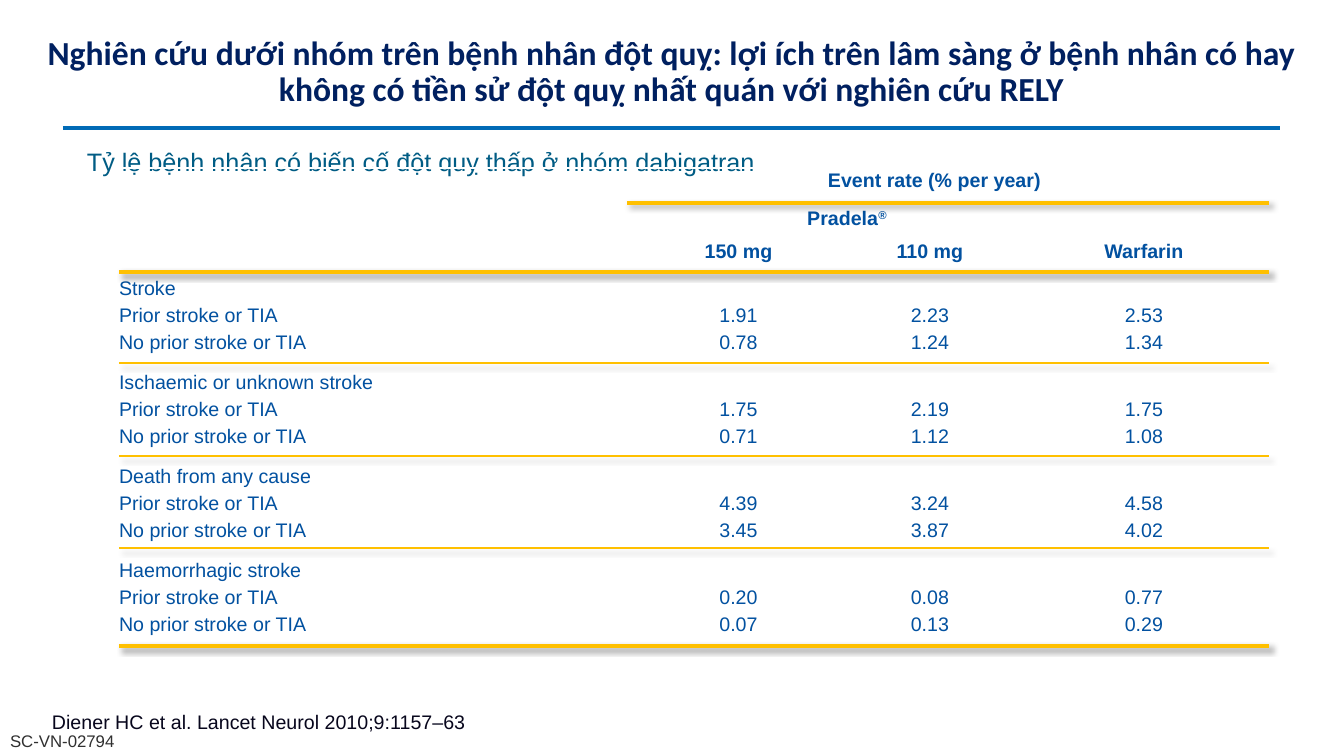
from lxml import etree
from pptx import Presentation
from pptx.dml.color import RGBColor
from pptx.enum.shapes import MSO_CONNECTOR
from pptx.enum.text import MSO_ANCHOR, PP_ALIGN
from pptx.oxml.ns import qn
from pptx.util import Pt

SCALE = 12192000 / 1344
LEFT, CENTER = PP_ALIGN.LEFT, PP_ALIGN.CENTER
TOP, MIDDLE, BOTTOM = MSO_ANCHOR.TOP, MSO_ANCHOR.MIDDLE, MSO_ANCHOR.BOTTOM
STRAIGHT = MSO_CONNECTOR.STRAIGHT

TABLE_BLUE = "0251A0"
GOLD = "FFC000"
INSETS = (10, 5, 10, 5)
COLUMN_WIDTHS = (518, 203, 180, 248)
HEADER_HEIGHTS = (26, 44, 28)
FIRST_TITLE_HEIGHT, TITLE_HEIGHT, VALUE_HEIGHT = 36, 40, 27
DOSES = ("150 mg", "110 mg", "Warfarin")
HISTORIES = ("Prior stroke or TIA", "No prior stroke or TIA")
OUTCOMES = (
    ("Stroke", ("1.91", "2.23", "2.53"), ("0.78", "1.24", "1.34")),
    ("Ischaemic or unknown stroke", ("1.75", "2.19", "1.75"), ("0.71", "1.12", "1.08")),
    ("Death from any cause", ("4.39", "3.24", "4.58"), ("3.45", "3.87", "4.02")),
    ("Haemorrhagic stroke", ("0.20", "0.08", "0.77"), ("0.07", "0.13", "0.29")),
)


def px(length):
    return round(length * SCALE)


def color(hex_value):
    return RGBColor.from_string(hex_value)


def write_text(frame, text, size=14, font="Arial", fill=TABLE_BLUE, bold=False,
               align=LEFT, spacing=None, superscript=""):
    paragraph = frame.paragraphs[0]
    paragraph.alignment = align
    if spacing:
        paragraph.line_spacing = spacing
    for content in filter(None, (text, superscript)):
        run = paragraph.add_run()
        run.text = content
        run.font.size = Pt(size)
        run.font.name = font
        run.font.bold = bold
        run.font.color.rgb = color(fill)
    if superscript:
        run.font._element.set("baseline", "30000")


def set_margins(target, margins):
    """Set left, top, right and bottom margins of a text frame or cell."""
    for side, margin in zip(("left", "top", "right", "bottom"), margins):
        setattr(target, f"margin_{side}", px(margin))


def add_text(slide, box, text, insets=INSETS, anchor=TOP, **text_format):
    frame = slide.shapes.add_textbox(*map(px, box)).text_frame
    frame.word_wrap = True
    frame.vertical_anchor = anchor
    set_margins(frame, insets)
    write_text(frame, text, **text_format)


def add_rule(slide, left, right, y, line_color, width, shadow=False):
    rule = slide.shapes.add_connector(STRAIGHT, px(left), px(y), px(right), px(y))
    rule.line.color.rgb = color(line_color)
    rule.line.width = Pt(width)
    effects = etree.SubElement(rule._element.spPr, qn("a:effectLst"))
    if shadow:
        outer = etree.SubElement(effects, qn("a:outerShdw"), blurRad=str(Pt(4)),
                                 dist=str(Pt(3)), dir="2700000", algn="tl",
                                 rotWithShape="0")
        black = etree.SubElement(outer, qn("a:srgbClr"), val="000000")
        etree.SubElement(black, qn("a:alpha"), val="40000")


def fill_cell(cell, text, margins=(0, 0, 0, 0), anchor=MIDDLE, **text_format):
    set_margins(cell, margins)
    cell.vertical_anchor = anchor
    write_text(cell.text_frame, text, **text_format)


def add_event_table(slide, left, top):
    heights = list(HEADER_HEIGHTS)
    for index in range(len(OUTCOMES)):
        heights += [TITLE_HEIGHT if index else FIRST_TITLE_HEIGHT,
                    VALUE_HEIGHT, VALUE_HEIGHT]
    width = sum(COLUMN_WIDTHS)
    table = slide.shapes.add_table(len(heights), len(COLUMN_WIDTHS), px(left), px(top),
                                   px(width), px(sum(heights))).table
    table.first_row = table.horz_banding = False
    for column, column_width in zip(table.columns, COLUMN_WIDTHS):
        column.width = px(column_width)
    for row, height in zip(table.rows, heights):
        row.height = px(height)
    for cell in table.iter_cells():
        cell.fill.background()
        set_margins(cell, (0, 0, 0, 0))
        cell.text_frame.paragraphs[0].font.size = Pt(14)

    table.cell(0, 1).merge(table.cell(0, 3))
    table.cell(1, 1).merge(table.cell(1, 2))
    fill_cell(table.cell(0, 1), "Event rate (% per year)", margins=(0, 0, 36, 0),
              bold=True, align=CENTER)
    fill_cell(table.cell(1, 1), "Pradela", margins=(37, 6, 0, 0), superscript="®",
              bold=True, align=CENTER)
    for column, dose in enumerate(DOSES, 1):
        fill_cell(table.cell(2, column), dose, bold=True, align=CENTER)

    for index, (outcome, *rates) in enumerate(OUTCOMES):
        title_row = len(HEADER_HEIGHTS) + 3 * index
        fill_cell(table.cell(title_row, 0), outcome, margins=(0, 0, 0, 2), anchor=BOTTOM)
        for row, (history, values) in enumerate(zip(HISTORIES, rates), title_row + 1):
            fill_cell(table.cell(row, 0), history)
            for column, value in enumerate(values, 1):
                fill_cell(table.cell(row, column), value, align=CENTER)

    right = left + width + 1
    add_rule(slide, left + 508, right, top + 35, GOLD, 2.25, shadow=True)
    for offset, weight in ((104, 2.25), (195, 1), (288, 1), (380, 1), (478, 2.25)):
        add_rule(slide, left, right, top + offset, GOLD, weight, shadow=True)


def add_heading(slide, left, top, width):
    add_text(slide, (left, top, width, 86),
             "Nghiên cứu dưới nhóm trên bệnh nhân đột quỵ: lợi ích trên lâm sàng ở bệnh "
             "nhân có hay không có tiền sử đột quỵ nhất quán với nghiên cứu RELY",
             insets=(0, 0, 0, 0), anchor=BOTTOM, size=24, font="Calibri", fill="002060",
             bold=True, align=CENTER, spacing=0.9)
    add_rule(slide, left + 30, left + width - 30, top + 105, "016BB6", 2.5)
    add_text(slide, (left + 44, top + 118, 729, 42),
             "Tỷ lệ bệnh nhân có biến cố đột quỵ thấp ở nhóm dabigatran",
             size=18, fill="005C84")


def add_footer(slide, left, top):
    add_text(slide, (left + 42, top, 1174, 29),
             "Diener HC et al. Lancet Neurol 2010;9:1157–63", fill="07061C")
    add_text(slide, (left, top + 21, 672, 30), "SC-VN-02794", size=12, fill="303030")


def main():
    presentation = Presentation()
    presentation.slide_width, presentation.slide_height = px(1344), px(756)
    slide = presentation.slides.add_slide(presentation.slide_layouts[6])
    add_heading(slide, 33, 23, 1277)
    add_event_table(slide, 119, 168)
    add_footer(slide, 0, 705)
    presentation.save("out.pptx")


if __name__ == "__main__":
    main()
